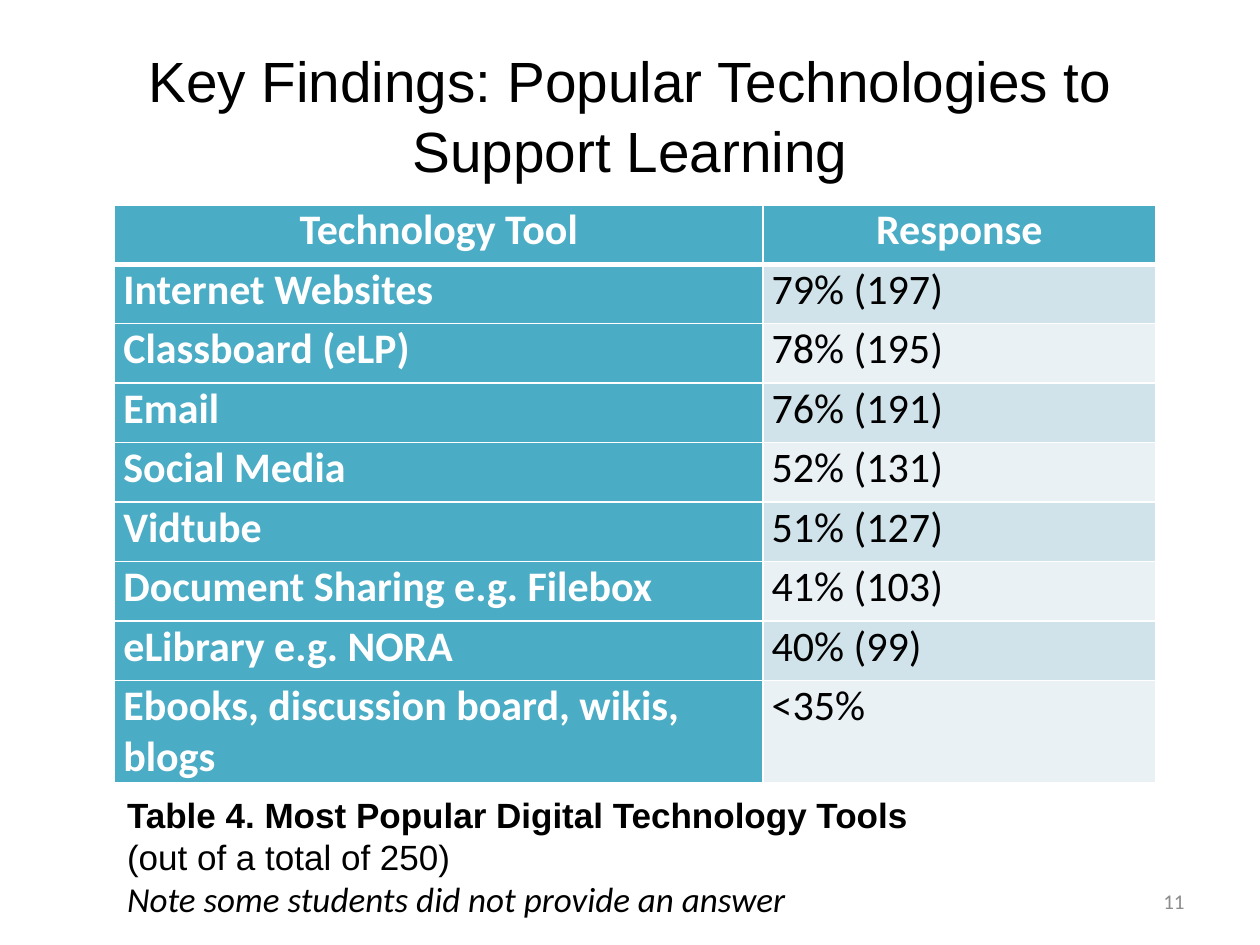
from lxml.etree import SubElement
from pptx import Presentation
from pptx.dml.color import RGBColor
from pptx.enum.text import MSO_ANCHOR as Anchor, PP_ALIGN as Align
from pptx.oxml.ns import qn
from pptx.util import Pt

BLACK = RGBColor(0, 0, 0)
WHITE = RGBColor(255, 255, 255)
GREY = RGBColor(0x8C, 0x8C, 0x8C)
TEAL = RGBColor(0x4B, 0xAC, 0xC6)
BANDS = [RGBColor(0xD0, 0xE3, 0xEA), RGBColor(0xE9, 0xF1, 0xF5)]


def write(paragraph, text, font="Calibri", size=24, color=BLACK,
          bold=False, italic=False, align=Align.LEFT):
    paragraph.alignment = align
    run = paragraph.add_run()
    run.text = text
    run.font.name = font
    run.font.size = Pt(size)
    run.font.color.rgb = color
    run.font.bold = bold
    run.font.italic = italic


def add_borders(cell, widths):
    properties = cell._tc.get_or_add_tcPr()
    for position, (side, width) in enumerate(widths.items()):
        line = SubElement(properties, qn(f"a:ln{side}"), w=str(Pt(width)))
        fill = SubElement(line, qn("a:solidFill"))
        SubElement(fill, qn("a:srgbClr"), val=str(WHITE))
        properties.insert(position, line)


deck = Presentation()
deck.slide_width, deck.slide_height = Pt(720), Pt(540)
slide = deck.slides.add_slide(deck.slide_layouts[5])

title = slide.shapes.title
title.left, title.top, title.width, title.height = Pt(36), Pt(21.6), Pt(648), Pt(86.4)
title.text_frame.vertical_anchor = Anchor.MIDDLE
heading = title.text_frame.paragraphs[0]
heading.line_spacing = 1.04
write(heading, "Key Findings: Popular Technologies to Support Learning",
      font="Arial", size=32.4, align=Align.CENTER)

findings = [
    ("Technology Tool", "Response"),
    ("Internet Websites", "79% (197)"),
    ("Classboard (eLP)", "78% (195)"),
    ("Email", "76% (191)"),
    ("Social Media", "52% (131)"),
    ("Vidtube", "51% (127)"),
    ("Document Sharing e.g. Filebox", "41% (103)"),
    ("eLibrary e.g. NORA", "40% (99)"),
    ("Ebooks, discussion board, wikis, blogs", "<35%"),
]
table = slide.shapes.add_table(len(findings), 2, Pt(65.5), Pt(117),
                               Pt(595), Pt(34 * len(findings))).table
table.columns[0].width, table.columns[1].width = Pt(370.5), Pt(224.5)

for row, finding in enumerate(findings):
    table.rows[row].height = Pt(34)
    for column, text in enumerate(finding):
        cell = table.cell(row, column)
        is_label = row == 0 or column == 0
        cell.margin_left = cell.margin_right = Pt(5)
        cell.margin_top = cell.margin_bottom = 0
        cell.fill.solid()
        cell.fill.fore_color.rgb = TEAL if is_label else BANDS[(row - 1) % 2]
        add_borders(cell, {"L": 1, "R": 1, "T": 3 if row == 1 else 1,
                           "B": 3 if row == 0 else 1})
        if row == 0:
            align = Align.CENTER
        else:
            align = Align.JUSTIFY if column else Align.LEFT
        write(cell.text_frame.paragraphs[0], text, bold=is_label,
              color=WHITE if is_label else BLACK, align=align)

caption = slide.shapes.add_textbox(Pt(65.5), Pt(449.5), Pt(618.5), Pt(80)).text_frame
caption.word_wrap = True
caption.vertical_anchor = Anchor.MIDDLE
write(caption.paragraphs[0], "Table 4. Most Popular Digital Technology Tools",
      font="Arial", size=20, bold=True)
write(caption.add_paragraph(), "(out of a total of 250)", font="Arial", size=20)
write(caption.add_paragraph(), "Note some students did not provide an answer",
      size=20, italic=True)

page_number = slide.shapes.add_textbox(Pt(516), Pt(500.5), Pt(168), Pt(28.8)).text_frame
page_number.word_wrap = True
page_number.vertical_anchor = Anchor.MIDDLE
write(page_number.paragraphs[0], "11", size=12, color=GREY, align=Align.RIGHT)

deck.save("out.pptx")
